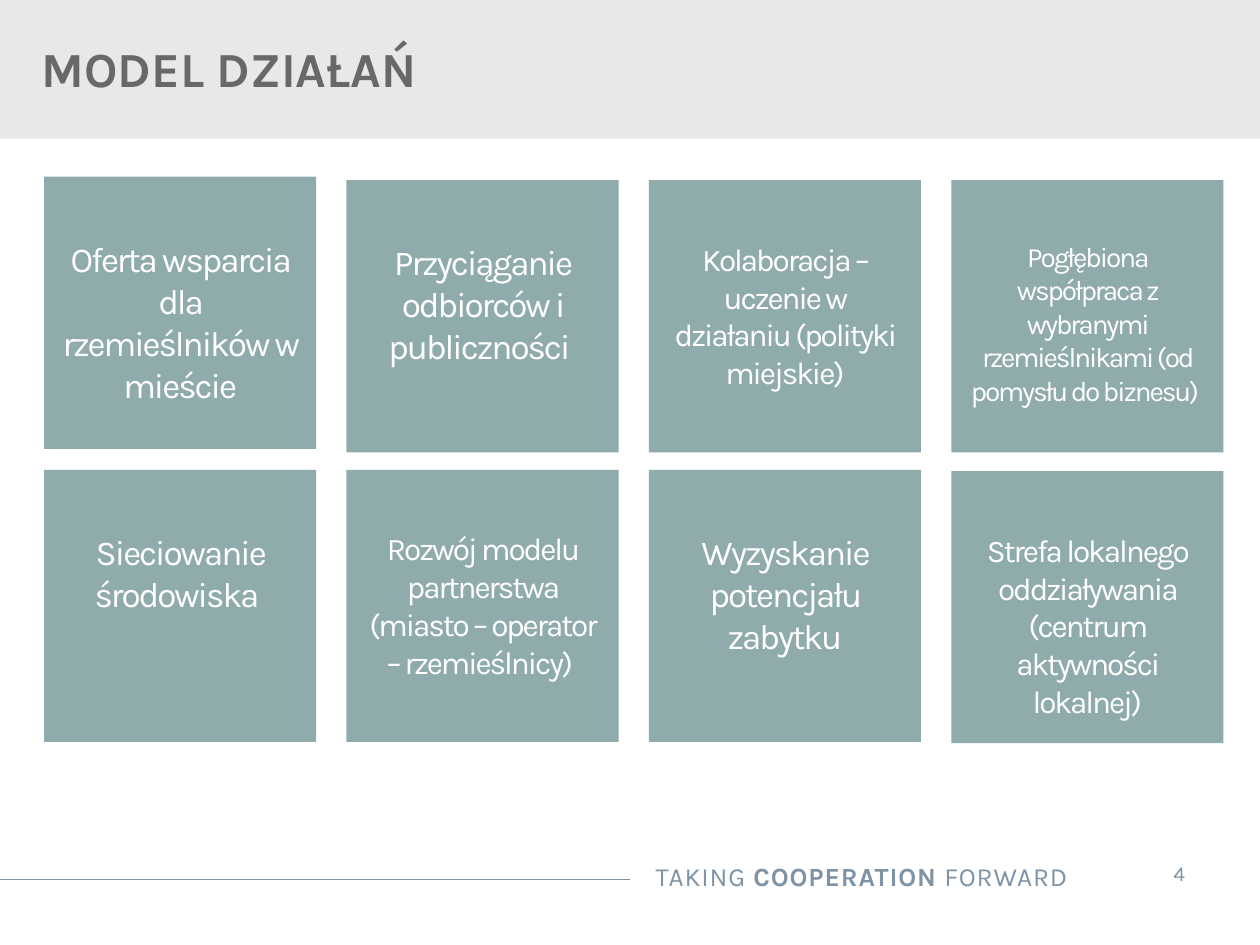
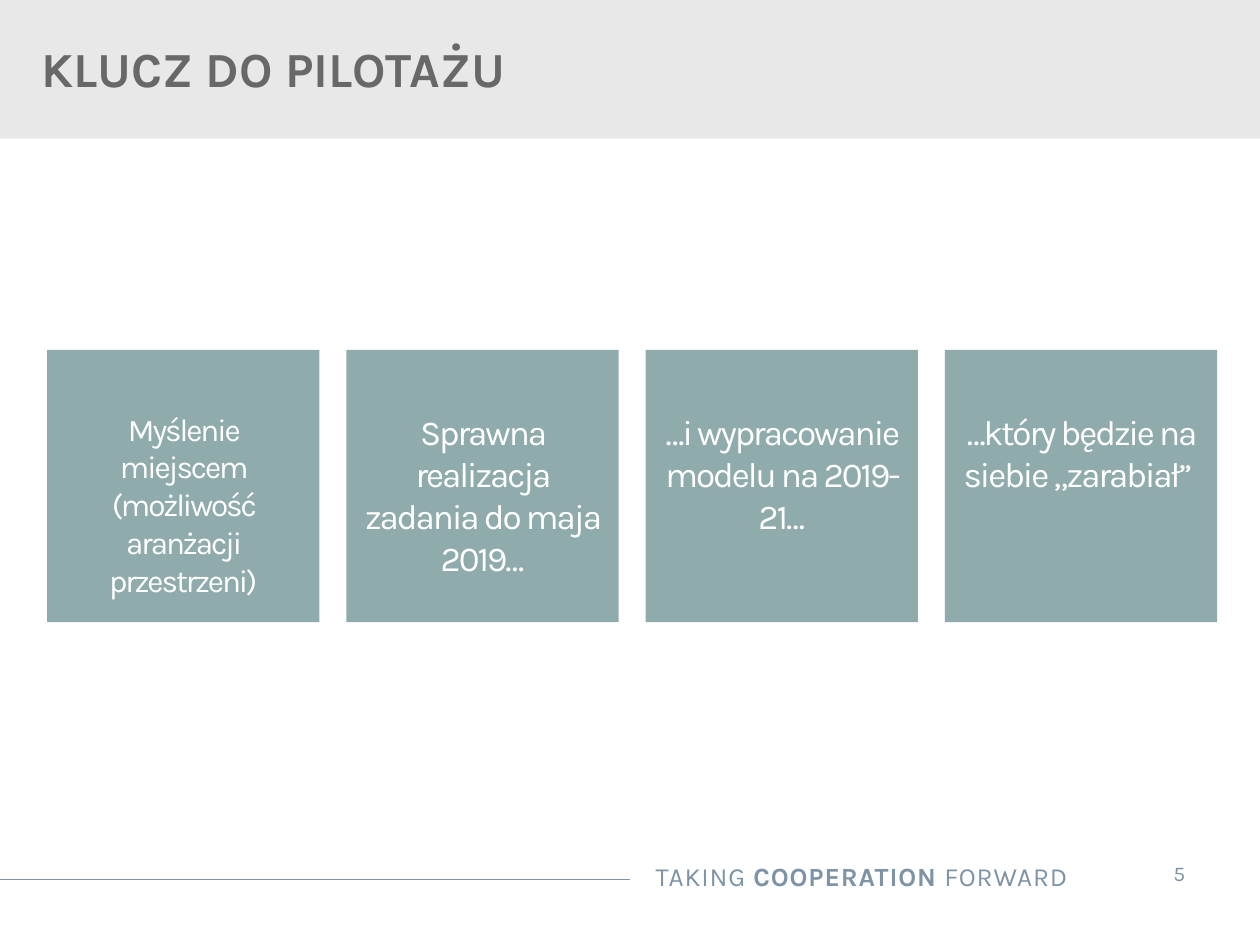
from dataclasses import dataclass

from lxml.etree import SubElement
from pptx import Presentation
from pptx.dml.color import RGBColor as Rgb
from pptx.enum.shapes import MSO_CONNECTOR as Link, MSO_SHAPE as Form
from pptx.enum.text import MSO_ANCHOR as Anchor, PP_ALIGN as Align
from pptx.oxml.ns import qn
from pptx.shapes.autoshape import Shape
from pptx.slide import Slide
from pptx.text.text import TextFrame
from pptx.util import Pt


@dataclass(frozen=True)
class Theme:
    font: str = "Karla"
    band: Rgb = Rgb(0xE8, 0xE8, 0xE8)
    head: Rgb = Rgb(0x68, 0x68, 0x68)
    foot: Rgb = Rgb(0x7E, 0x93, 0xA5)
    tile: Rgb = Rgb(0x90, 0xAB, 0xAB)
    white: Rgb = Rgb(0xFF, 0xFF, 0xFF)
    head_size: float = 28
    foot_size: float = 15
    page_size: float = 12
    large: float = 20
    mid: float = 18
    small: float = 16


@dataclass(frozen=True)
class Box:
    left: float
    top: float
    width: float
    height: float

    def points(self) -> tuple[Pt, Pt, Pt, Pt]:
        return Pt(self.left), Pt(self.top), Pt(self.width), Pt(self.height)


@dataclass(frozen=True)
class Tile:
    text: str
    size: float
    shift: float = 0  # offset down from the row


@dataclass(frozen=True)
class Page:
    title: str
    number: int
    left: float
    top: float
    pitch: float
    tiles: list[Tile]


THEME = Theme()
WIDTH, HEIGHT = 720, 540
SIDE = 155.5
COLUMNS = 4
ROW_STEP = 165.5

PAGES = [
    Page("MODEL DZIAŁAŃ", 4, 25.2, 103, 172.8, [
        Tile("Oferta wsparcia dla rzemieślników w mieście", THEME.large, -2),
        Tile("Przyciąganie odbiorców i publiczności ", THEME.large),
        Tile("Kolaboracja – uczenie w działaniu (polityki miejskie)", THEME.mid),
        Tile("Pogłębiona współpraca z wybranymi rzemieślnikami "
             "(od pomysłu do biznesu) ", THEME.small),
        Tile("Sieciowanie środowiska ", THEME.large),
        Tile("Rozwój modelu partnerstwa (miasto – operator – rzemieślnicy) ",
             THEME.mid),
        Tile("Wyzyskanie potencjału zabytku", THEME.large),
        Tile("Strefa lokalnego oddziaływania (centrum aktywności lokalnej)",
             THEME.mid, 0.7),
    ]),
    Page("KLUCZ DO PILOTAŻU", 5, 27, 200, 171, [
        Tile("Myślenie miejscem (możliwość aranżacji przestrzeni)", THEME.mid),
        Tile("Sprawna realizacja zadania do maja 2019…", THEME.large),
        Tile("…i wypracowanie modelu na 2019-21…", THEME.large),
        Tile("…który będzie na siebie „zarabiał” ", THEME.large),
    ]),
]


def write(frame: TextFrame, parts: list[tuple[str, bool]], size: float,
          color: Rgb, align: Align, track: float = 0) -> None:
    """Fill the first paragraph with (text, bold) parts; track is in points."""
    para = frame.paragraphs[0]
    para.alignment = align
    for text, bold in parts:
        run = para.add_run()
        run.text = text
        font = run.font
        font.name, font.size, font.bold = THEME.font, Pt(size), bold
        font.color.rgb = color
        if track:
            run._r.get_or_add_rPr().set("spc", str(round(track * 100)))


def inset(frame: TextFrame, left: float, top: float,
          right: float, bottom: float) -> None:
    frame.margin_left, frame.margin_top = Pt(left), Pt(top)
    frame.margin_right, frame.margin_bottom = Pt(right), Pt(bottom)


def add_text(slide: Slide, box: Box, wrap: bool = True) -> TextFrame:
    frame = slide.shapes.add_textbox(*box.points()).text_frame
    frame.word_wrap = wrap
    return frame


def add_rect(slide: Slide, box: Box, color: Rgb) -> Shape:
    rect = slide.shapes.add_shape(Form.RECTANGLE, *box.points())
    rect.shadow.inherit = False
    rect.fill.solid()
    rect.fill.fore_color.rgb = color
    rect.line.fill.background()
    return rect


def add_rule(slide: Slide) -> None:
    rule = slide.shapes.add_connector(
        Link.STRAIGHT, Pt(0), Pt(502.5), Pt(WIDTH / 2), Pt(502.5))
    rule.line.color.rgb = THEME.foot
    rule.line.width = Pt(0.75)
    SubElement(rule._element.spPr, qn("a:effectLst"))


def add_frame(slide: Slide, page: Page) -> None:
    """Draw the title band and the footer."""
    add_rule(slide)
    add_rect(slide, Box(0, 0, WIDTH, 79.2), THEME.band)

    motto = add_text(slide, Box(279.4, 488.2, 337.7, 25.2))
    write(motto, [("TAKING ", False), ("COOPERATION", True),
                  (" FORWARD", False)],
          THEME.foot_size, THEME.foot, Align.RIGHT, 0.5)

    count = add_text(slide, Box(647.3, 484.6, 53.3, 28.8), wrap=False)
    inset(count, 14.4, 7.2, 14.4, 7.2)
    write(count, [(str(page.number), False)],
          THEME.page_size, THEME.foot, Align.CENTER)

    title = add_text(slide, Box(0, 11.5, 516.5, 54))
    inset(title, 23.8, 3.6, 7.2, 3.6)
    title.vertical_anchor = Anchor.MIDDLE
    write(title, [(page.title, True)],
          THEME.head_size, THEME.head, Align.LEFT)


def add_tile(slide: Slide, tile: Tile, left: float, top: float) -> None:
    box = Box(left, top + tile.shift, SIDE, SIDE)
    frame = add_rect(slide, box, THEME.tile).text_frame
    frame.word_wrap = True
    frame.vertical_anchor = Anchor.TOP
    inset(frame, 8.6, 30.5 + tile.size / 5, 8.6, 8.6)
    write(frame, [(tile.text, False)],
          tile.size, THEME.white, Align.CENTER, -1.2)


def main() -> None:
    deck = Presentation()
    deck.slide_width, deck.slide_height = Pt(WIDTH), Pt(HEIGHT)
    for page in PAGES:
        slide = deck.slides.add_slide(deck.slide_layouts[6])
        add_frame(slide, page)
        for i, tile in enumerate(page.tiles):
            row, col = divmod(i, COLUMNS)
            add_tile(slide, tile, page.left + col * page.pitch,
                     page.top + row * ROW_STEP)
    deck.save("out.pptx")


if __name__ == "__main__":
    main()
